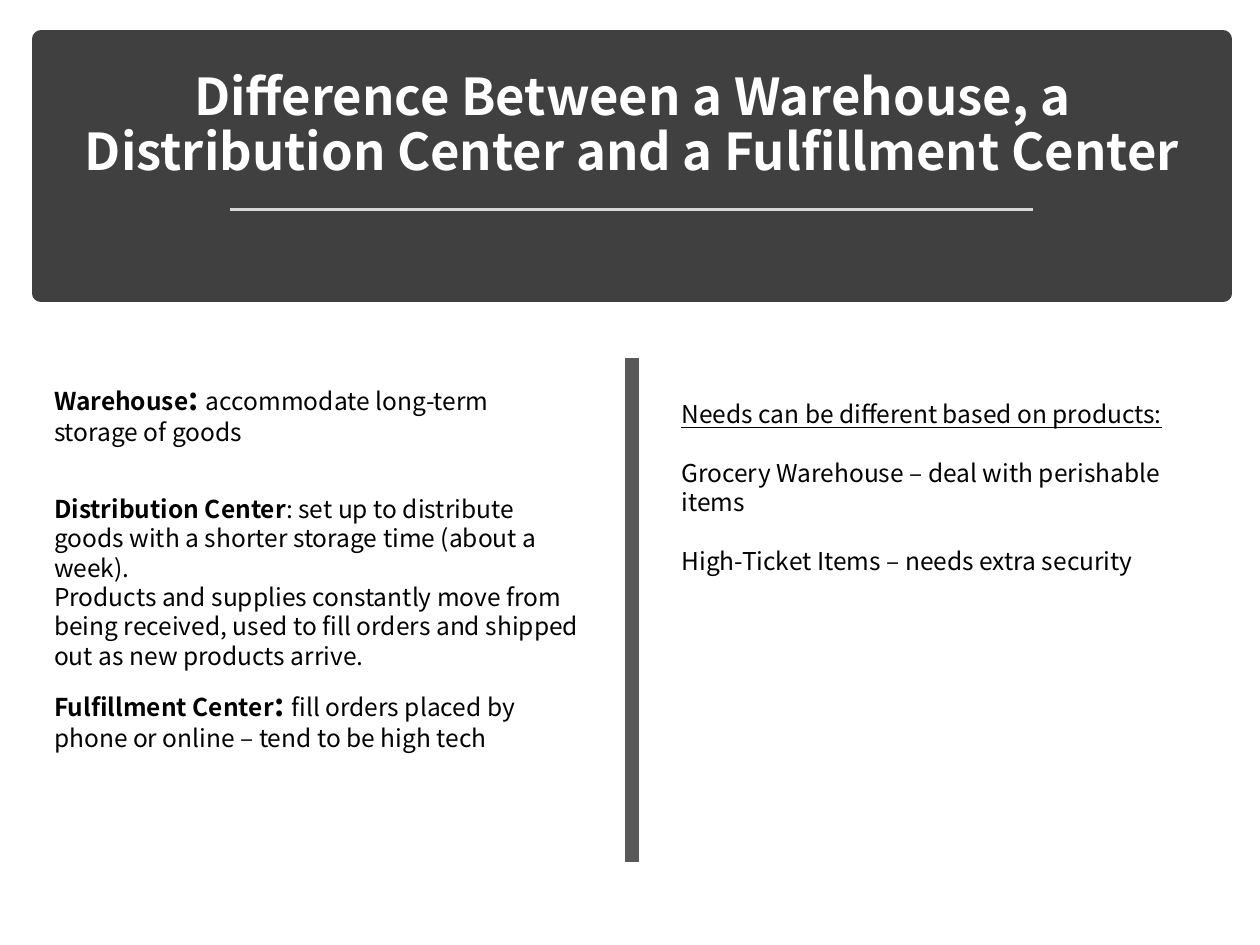
from lxml import etree
from pptx import Presentation, util as u
from pptx.dml.color import RGBColor
from pptx.enum import shapes, text
from pptx.oxml.ns import qn

Pt = u.Pt
FONT = "Noto Sans CJK KR"
COLORS = {"banner": "404040", "title": "FFFFFF", "rule": "D9D9D9",
          "divider": "595959", "text": "000000"}


def rgb(name):
    return RGBColor.from_string(COLORS[name])


def add_run(p, words, size, color, bold=False, underline=False):
    r = p.add_run()
    r.text = words
    r.font.name = FONT
    r.font.size = Pt(size)
    r.font.bold = bold
    r.font.underline = underline
    r.font.color.rgb = rgb(color)


prs = Presentation()
prs.slide_width, prs.slide_height = Pt(720), Pt(540)
s = prs.slides.add_slide(prs.slide_layouts[5])

banner = s.shapes.add_shape(shapes.MSO_SHAPE.RECTANGLE, Pt(23.5), Pt(22.3), Pt(675.4), Pt(145.4))
banner.shadow.inherit = False
banner.fill.solid()
banner.fill.fore_color.rgb = rgb("banner")
banner.line.color.rgb = rgb("banner")
banner.line.width = Pt(10)
etree.SubElement(banner.line._get_or_add_ln(), qn("a:round"))

title = s.shapes.title
s.shapes._spTree.append(title._element)
title.left, title.top, title.width, title.height = Pt(32.4), Pt(33.8), Pt(658), Pt(73.4)
tf = title.text_frame
tf.word_wrap = True
tf.auto_size = text.MSO_AUTO_SIZE.NONE
tf.vertical_anchor = text.MSO_ANCHOR.BOTTOM
p = tf.paragraphs[0]
p.alignment = text.PP_ALIGN.CENTER
p.line_spacing = 0.9
add_run(p, "Difference Between a Warehouse, a Distribution Center and a Fulfillment Center",
        29, "title", bold=True)

for x1, y1, x2, y2, color, width in [
    (131.5, 119.7, 590.5, 119.7, "rule", 1.75),
    (361.2, 204.5, 361.2, 492.5, "divider", 8),
]:
    line = s.shapes.add_connector(shapes.MSO_CONNECTOR.STRAIGHT, Pt(x1), Pt(y1), Pt(x2), Pt(y2))
    line.line.color.rgb = rgb(color)
    line.line.width = Pt(width)
    etree.SubElement(line._element.spPr, qn("a:effectLst"))

BOLD = {"bold": True}
UNDERLINE = {"underline": True}
boxes = [
    (23.8, 278.6, 318.2, 92.2, 0, [
        [("Distribution Center", 14, BOLD),
         (": set up to distribute goods with a shorter storage time (about a week).", 14, {})],
        [("Products and supplies constantly move from being received, "
          "used to fill orders and shipped out as new products arrive.", 14, {})],
    ]),
    (23.8, 213.1, 268.6, 46.1, 0, [
        [("Warehouse", 14, BOLD), (": ", 18, BOLD),
         ("accommodate long-term storage of goods", 14, {})],
    ]),
    (23.8, 388.1, 280.1, 46.1, 0, [
        [("Fulfillment Center", 14, BOLD), (": ", 18, BOLD),
         ("fill orders placed by phone or online – tend to be high tech", 14, {})],
    ]),
    (382.3, 224.6, 294.5, 108.7, 16.8, [
        [("Needs can be different based on products:", 14, UNDERLINE)],
        [("Grocery Warehouse – deal with perishable items", 14, {})],
        [("High-Ticket Items – needs extra security", 14, {})],
    ]),
]
for left, top, width, height, gap, paragraphs in boxes:
    tf = s.shapes.add_textbox(Pt(left), Pt(top), Pt(width), Pt(height)).text_frame
    tf.word_wrap = True
    tf.auto_size = text.MSO_AUTO_SIZE.SHAPE_TO_FIT_TEXT
    for i, runs in enumerate(paragraphs):
        p = tf.add_paragraph() if i else tf.paragraphs[0]
        if i and gap:
            p.space_before = Pt(gap)
        for words, size, style in runs:
            add_run(p, words, size, "text", **style)

prs.save("out.pptx")
